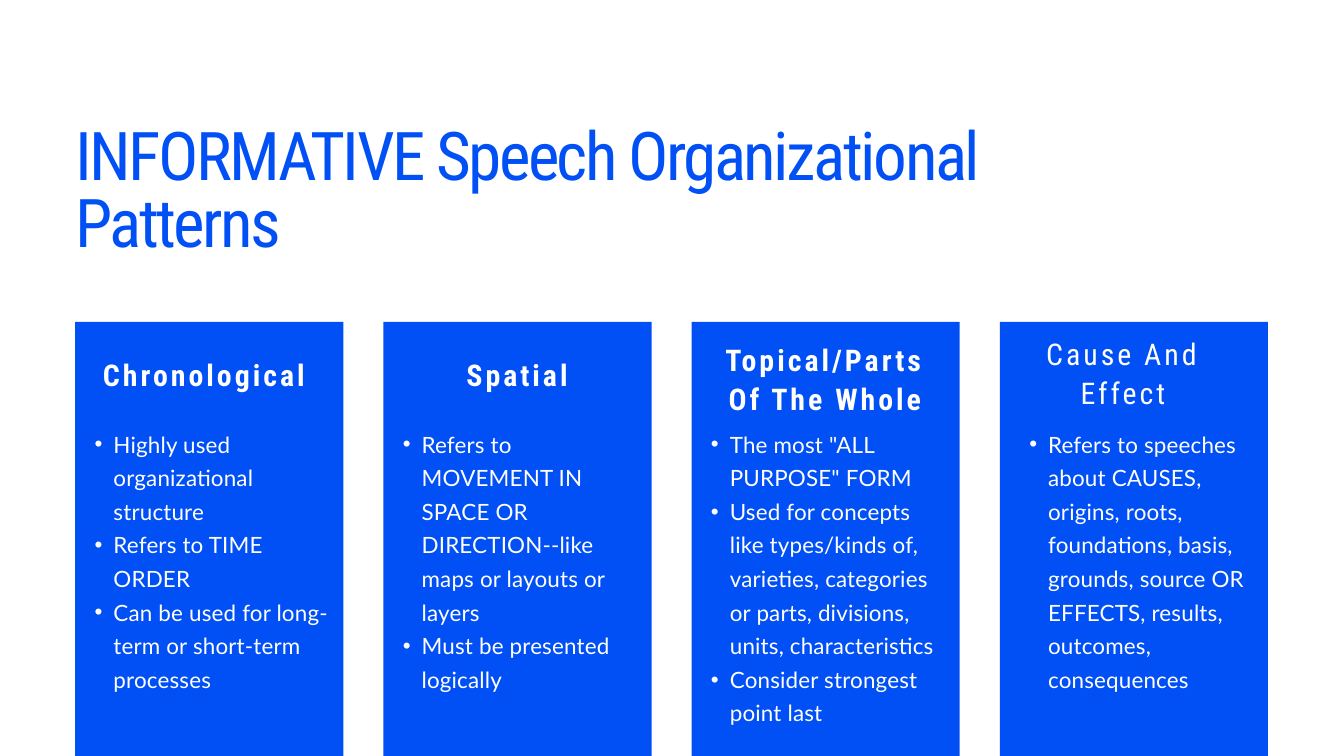
from lxml import etree
from pptx import Presentation
from pptx.dml.color import RGBColor
from pptx.enum.shapes import MSO_SHAPE
from pptx.enum.text import MSO_ANCHOR, MSO_AUTO_SIZE, PP_ALIGN
from pptx.oxml.ns import qn
from pptx.util import Pt

RECTANGLE = MSO_SHAPE.RECTANGLE
TOP = MSO_ANCHOR.TOP
NO_AUTOFIT = MSO_AUTO_SIZE.NONE
LEFT, CENTER = PP_ALIGN.LEFT, PP_ALIGN.CENTER

TITLE = "INFORMATIVE Speech Organizational Patterns"

# Heading boxes: offset from the card's left edge, top, width, height.
# Body boxes: offset from the card's left edge, width, height.
PATTERNS = [
    {
        "heading": "Chronological", "bold": True,
        "heading_box": (10.1, 378.7, 255.6, 40.3),
        "body_box": (0, 275, 288),
        "points": [
            "Highly used organizational structure",
            "Refers to TIME ORDER",
            "Can be used for long-term or short-term processes",
        ],
    },
    {
        "heading": "Spatial", "bold": True,
        "heading_box": (22, 378.7, 242.6, 40.3),
        "body_box": (0, 256.3, 287.3),
        "points": [
            "Refers to MOVEMENT IN SPACE OR DIRECTION--like maps or layouts or layers",
            "Must be presented logically",
        ],
    },
    {
        "heading": "Topical/Parts Of The Whole", "bold": True,
        "heading_box": (21.6, 362.9, 242.6, 81.4),
        "body_box": (0, 275, 322.6),
        "points": [
            'The most "ALL PURPOSE" FORM',
            "Used for concepts like types/kinds of, varieties, categories or parts, "
            "divisions, units, characteristics",
            "Consider strongest point last",
        ],
    },
    {
        "heading": "Cause And Effect", "bold": False,
        "heading_box": (10.8, 356.4, 242.6, 81.4),
        "body_box": (10.8, 255.6, 287.3),
        "points": [
            "Refers to speeches about CAUSES, origins, roots, foundations, basis, "
            "grounds, source OR EFFECTS, results, outcomes, consequences",
        ],
    },
]

BLUE = RGBColor(0x00, 0x50, 0xF5)
WHITE = RGBColor(0xFF, 0xFF, 0xFF)
THEME = {
    "title": {"font": "Roboto Condensed", "size": 72, "color": BLUE,
              "line": 72, "tracking": -2.7},
    "heading": {"font": "Roboto Condensed", "size": 32, "color": WHITE,
                "line": 41.6, "tracking": 3.2},
    "body": {"font": "Lato", "size": 24, "color": WHITE,
             "line": 36, "tracking": 0.2},
}

SLIDE_WIDTH, SLIDE_HEIGHT = 1440, 810
TITLE_BOX = (80.6, 136.1, 1196.6, 72.7)
CARD_LEFT, CARD_TOP = 80.6, 344.9
CARD_WIDTH, CARD_HEIGHT = 287.3, 562.3
CARD_PITCH = 330.2
BODY_TOP = 454.3
BULLET_MARGIN, BULLET_INDENT = 41, -20.2


def prepare_frame(frame):
    frame.margin_left = frame.margin_right = Pt(0)
    frame.margin_top = frame.margin_bottom = Pt(0)
    frame.word_wrap = True
    frame.auto_size = NO_AUTOFIT
    frame.vertical_anchor = TOP


def write_paragraph(paragraph, text, style, alignment=LEFT, bold=False):
    paragraph.alignment = alignment
    paragraph.line_spacing = Pt(style["line"])
    paragraph.space_before = paragraph.space_after = Pt(0)
    run = paragraph.add_run()
    run.text = text
    run.font.name = style["font"]
    run.font.size = Pt(style["size"])
    run.font.color.rgb = style["color"]
    run.font.bold = bold
    run.font._element.set("spc", str(round(style["tracking"] * 100)))


def add_bullet(paragraph):
    paragraph.level = 1
    properties = paragraph._p.get_or_add_pPr()
    properties.set("marL", str(Pt(BULLET_MARGIN)))
    properties.set("indent", str(Pt(BULLET_INDENT)))
    etree.SubElement(properties, qn("a:buFont")).set("typeface", "Arial")
    etree.SubElement(properties, qn("a:buChar")).set("char", "•")


def add_text_frame(slide, *box):
    frame = slide.shapes.add_textbox(*map(Pt, box)).text_frame
    prepare_frame(frame)
    return frame


def add_title(slide):
    title = slide.shapes.title
    title.left, title.top, title.width, title.height = map(Pt, TITLE_BOX)
    prepare_frame(title.text_frame)
    write_paragraph(title.text_frame.paragraphs[0], TITLE, THEME["title"])


def add_card(slide, left, pattern):
    card = slide.shapes.add_shape(
        RECTANGLE, Pt(left), Pt(CARD_TOP), Pt(CARD_WIDTH), Pt(CARD_HEIGHT))
    card.shadow.inherit = False
    card.fill.solid()
    card.fill.fore_color.rgb = BLUE
    card.line.fill.background()

    offset, width, height = pattern["body_box"]
    body = add_text_frame(slide, left + offset, BODY_TOP, width, height)
    for index, point in enumerate(pattern["points"]):
        paragraph = body.add_paragraph() if index else body.paragraphs[0]
        write_paragraph(paragraph, point, THEME["body"])
        add_bullet(paragraph)

    offset, top, width, height = pattern["heading_box"]
    heading = add_text_frame(slide, left + offset, top, width, height)
    write_paragraph(heading.paragraphs[0], pattern["heading"],
                    THEME["heading"], CENTER, pattern["bold"])


def main():
    presentation = Presentation()
    presentation.slide_width = Pt(SLIDE_WIDTH)
    presentation.slide_height = Pt(SLIDE_HEIGHT)
    slide = presentation.slides.add_slide(presentation.slide_layouts[5])
    add_title(slide)
    for index, pattern in enumerate(PATTERNS):
        add_card(slide, CARD_LEFT + index * CARD_PITCH, pattern)
    presentation.save("out.pptx")


if __name__ == "__main__":
    main()
